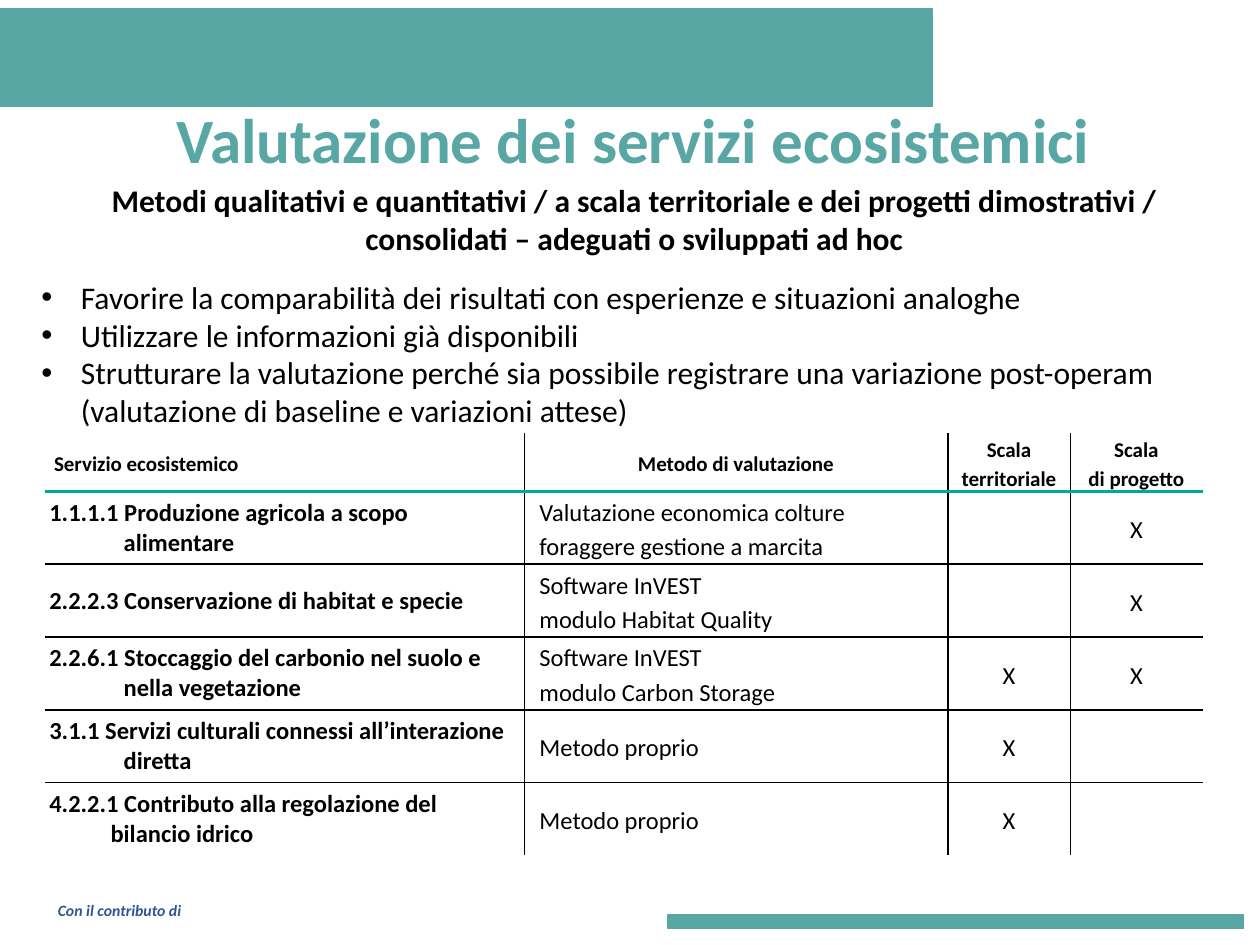
from dataclasses import dataclass

from lxml.etree import SubElement
from pptx import Presentation
from pptx.dml.color import RGBColor
from pptx.enum.shapes import MSO_SHAPE
from pptx.enum.text import MSO_ANCHOR, MSO_AUTO_SIZE, PP_ALIGN
from pptx.oxml.ns import qn
from pptx.util import Pt


@dataclass(frozen=True)
class Theme:
    font: str = "Calibri"
    band: str = "58A7A4"
    rule: str = "00A99C"
    ink: str = "000000"
    credit: str = "2F5597"
    title_size: float = 36
    body_size: float = 18
    cell_size: float = 14
    header_size: float = 12
    credit_size: float = 9
    thin: float = 1
    thick: float = 2.25
    table_spacing: float = 1.15


class SlideBuilder:
    def __init__(self, theme, page):
        self.theme = theme
        self.page = page

    def place(self, shape, left, top, width, height):
        shape.left, shape.top = Pt(left), Pt(top)
        shape.width, shape.height = Pt(width), Pt(height)

    def style(self, paragraph, size, color, bold=False, italic=False, align=PP_ALIGN.LEFT):
        paragraph.alignment = align
        paragraph.space_before = Pt(0)
        font = paragraph.font
        font.name, font.size = self.theme.font, Pt(size)
        font.bold, font.italic = bold, italic
        font.color.rgb = RGBColor.from_string(color)

    def indent(self, paragraph, margin, first):
        properties = paragraph._p.get_or_add_pPr()
        properties.set("marL", str(Pt(margin)))
        properties.set("indent", str(Pt(first)))
        return properties

    def band(self, *bounds):
        shape = self.page.shapes.add_shape(MSO_SHAPE.RECTANGLE, *map(Pt, bounds))
        shape.shadow.inherit = False
        shape.fill.solid()
        shape.fill.fore_color.rgb = RGBColor.from_string(self.theme.band)
        shape.line.color.rgb = RGBColor.from_string(self.theme.band)
        shape.line.width = Pt(self.theme.thin)

    def credit(self, text, *bounds):
        box = self.page.shapes.add_textbox(*map(Pt, bounds))
        box.text_frame.word_wrap = True
        para = box.text_frame.paragraphs[0]
        para.text = text
        self.style(para, self.theme.credit_size, self.theme.credit, True, True)

    def title(self, text, *bounds):
        box = self.page.shapes.title
        self.place(box, *bounds)
        frame = box.text_frame
        frame.text = text
        frame.auto_size = MSO_AUTO_SIZE.NONE
        frame.vertical_anchor = MSO_ANCHOR.MIDDLE
        self.style(frame.paragraphs[0], self.theme.title_size, self.theme.band, True,
                   align=PP_ALIGN.CENTER)

    def body(self, heading, bullets, *bounds):
        box = self.page.placeholders[1]
        self.place(box, *bounds)
        frame = box.text_frame
        frame.text = "\n".join([heading, *bullets])
        frame.auto_size = MSO_AUTO_SIZE.NONE
        frame.vertical_anchor = MSO_ANCHOR.TOP
        lead, *items = frame.paragraphs
        SubElement(self.indent(lead, 0, 0), qn("a:buNone"))
        self.style(lead, self.theme.body_size, self.theme.ink, True, align=PP_ALIGN.CENTER)
        lead.space_after = Pt(12)
        for item in items:
            properties = self.indent(item, 22.5, -22.5)
            SubElement(properties, qn("a:buFont")).set("typeface", "Arial")
            SubElement(properties, qn("a:buChar")).set("char", "•")
            self.style(item, self.theme.body_size, self.theme.ink)

    def border(self, cell, side, color=None, width=0):
        line = SubElement(cell._tc.get_or_add_tcPr(), qn(f"a:ln{side}"), w=str(Pt(width)))
        if color:
            fill = SubElement(line, qn("a:solidFill"))
            SubElement(fill, qn("a:srgbClr"), val=color)
        else:
            SubElement(line, qn("a:noFill"))

    def cell_borders(self, cell, row, column, last_row, last_column):
        theme = self.theme
        thin, thick = (theme.ink, theme.thin), (theme.rule, theme.thick)
        self.border(cell, "L", *(thin if column > 0 else ()))
        self.border(cell, "R", *(thin if column < last_column else ()))
        self.border(cell, "T", *(thick if row == 1 else thin if row else ()))
        self.border(cell, "B", *(thick if row == 0 else thin if row < last_row else ()))

    def cell_text(self, cell, text, row, column, hanging):
        theme = self.theme
        cell.margin_left = cell.margin_right = Pt(2.2)
        cell.margin_top = cell.margin_bottom = Pt(0)
        cell.vertical_anchor = MSO_ANCHOR.MIDDLE
        cell.text = text
        header, service = row == 0, column == 0
        centred = column > 1 or header and not service
        for para in cell.text_frame.paragraphs:
            if service and not header:
                self.indent(para, hanging, -hanging)
            else:
                para.line_spacing = theme.table_spacing
                if column == 1 and not header:
                    self.indent(para, 6.5, 0)
            self.style(para, theme.header_size if header else theme.cell_size, theme.ink,
                       header or service, align=PP_ALIGN.CENTER if centred else PP_ALIGN.LEFT)

    def table(self, left, top, widths, heights, rows, hangings):
        frame = self.page.shapes.add_table(len(rows), len(widths), Pt(left), Pt(top),
                                           Pt(sum(widths)), Pt(sum(heights)))
        table = frame.table
        table.first_row = table.horz_banding = False
        for column, width in zip(table.columns, widths):
            column.width = Pt(width)
        for row, height in zip(table.rows, heights):
            row.height = Pt(height)
        for r, (texts, hanging) in enumerate(zip(rows, hangings)):
            for c, text in enumerate(texts):
                cell = table.cell(r, c)
                self.cell_text(cell, text, r, c, hanging)
                self.cell_borders(cell, r, c, len(rows) - 1, len(widths) - 1)
                cell.fill.background()


SERVICES = [
    (" Servizio ecosistemico", "Metodo di valutazione", "Scala\nterritoriale",
     "Scala\ndi progetto"),
    ("1.1.1.1 Produzione agricola a scopo alimentare",
     "Valutazione economica colture foraggere gestione a marcita", "", "X"),
    ("2.2.2.3 Conservazione di habitat e specie",
     "Software InVEST\nmodulo Habitat Quality", "", "X"),
    ("2.2.6.1 Stoccaggio del carbonio nel suolo e nella vegetazione",
     "Software InVEST\nmodulo Carbon Storage", "X", "X"),
    ("3.1.1 Servizi culturali connessi all’interazione diretta", "Metodo proprio", "X", ""),
    ("4.2.2.1 Contributo alla regolazione del bilancio idrico", "Metodo proprio", "X", ""),
]


def main():
    deck = Presentation()
    deck.slide_width, deck.slide_height = Pt(720), Pt(540)
    page = deck.slides.add_slide(deck.slide_layouts[1])
    builder = SlideBuilder(Theme(), page)
    builder.band(-8.6, 5, 541.5, 55.5)
    builder.credit("Con il contributo di", 26, 511, 324, 18)
    builder.band(381.6, 522.7, 329, 8)
    builder.table(26, 247.7, [273.6, 242, 70, 75.6], [32.4] + [41.6] * 5,
                  SERVICES, [0] + [42.5] * 4 + [35])
    builder.title("Valutazione dei servizi ecosistemici", 38, 49, 648, 60.5)
    builder.body(
        "Metodi qualitativi e quantitativi / a scala territoriale e dei progetti "
        "dimostrativi / consolidati – adeguati o sviluppati ad hoc",
        ["Favorire la comparabilità dei risultati con esperienze e situazioni analoghe",
         "Utilizzare le informazioni già disponibili",
         "Strutturare la valutazione perché sia possibile registrare una variazione "
         "post-operam (valutazione di baseline e variazioni attese)"],
        16.5, 100, 692, 150.5)
    deck.save("out.pptx")


if __name__ == "__main__":
    main()
